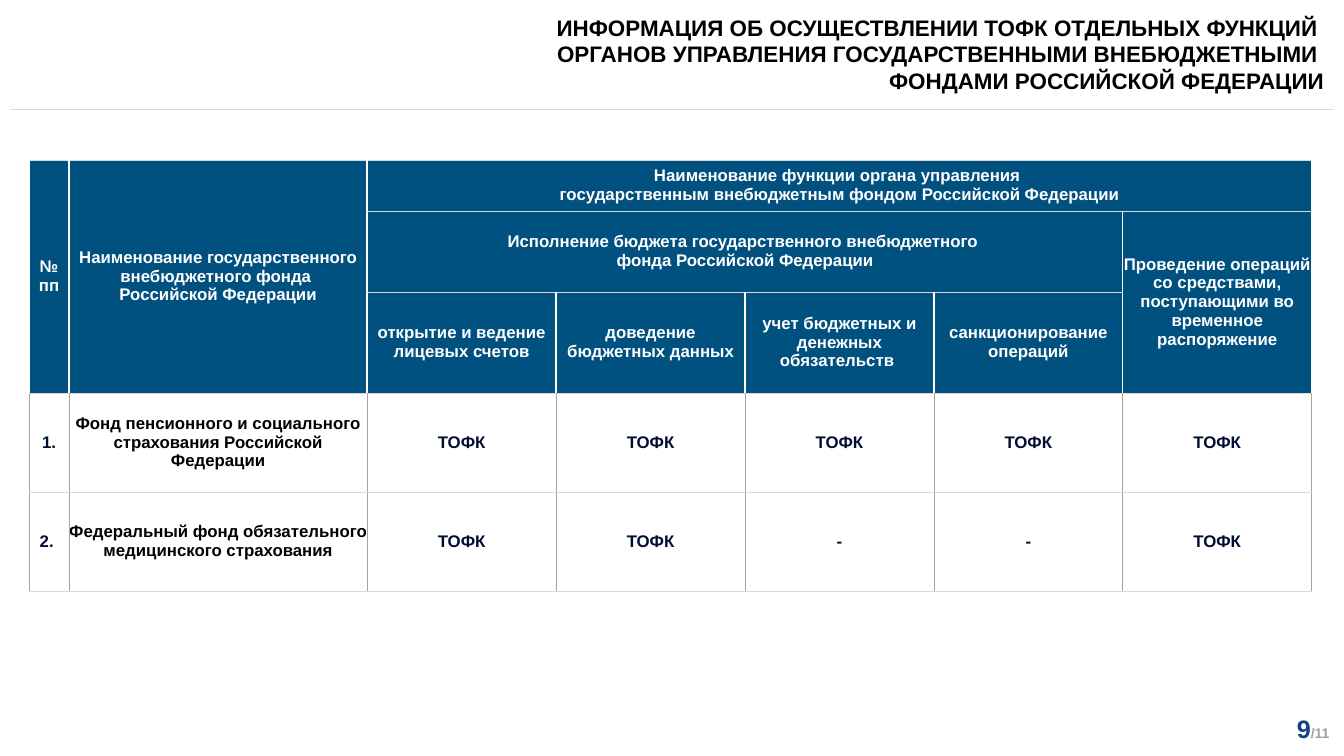
from dataclasses import dataclass

from pptx import Presentation, util as u
from pptx.dml.color import RGBColor
from pptx.enum import shapes, text
from pptx.oxml import parse_xml
from pptx.oxml.ns import nsdecls


@dataclass(frozen=True)
class Theme:
    font: str = "Arial"
    header: str = "005180"
    white: str = "FFFFFF"
    black: str = "000000"
    navy: str = "000D33"
    rule: str = "D9D9D9"
    grid: str = "A7A69B"
    page: str = "11437F"
    total: str = "A0A0A0"
    title_size: int = 32
    table_size: int = 24
    page_size: int = 36
    total_size: int = 20


THEME = Theme()
SLIDE_WIDTH, SLIDE_HEIGHT = u.Inches(26.67), u.Inches(15)

# Table grid: relative column widths and row heights
COLUMNS = [79, 592] + [375] * 5
ROWS = [102, 160, 200, 197, 197]

# Header cells: row, column, rows spanned, columns spanned, wording
HEADERS = [
    (0, 0, 3, 1, "№ пп"),
    (0, 1, 3, 1, "Наименование государственного внебюджетного фонда \n"
                 "Российской Федерации"),
    (0, 2, 1, 5, "Наименование функции органа управления \n"
                 "государственным внебюджетным фондом Российской Федерации"),
    (1, 2, 1, 4, "Исполнение бюджета государственного внебюджетного \n"
                 "фонда Российской Федерации"),
    (1, 6, 2, 1, "Проведение операций со средствами, поступающими во "
                 "временное распоряжение"),
    (2, 2, 1, 1, "открытие и ведение лицевых счетов"),
    (2, 3, 1, 1, "доведение бюджетных данных"),
    (2, 4, 1, 1, "учет бюджетных и денежных обязательств "),
    (2, 5, 1, 1, "санкционирование операций"),
]
HEADER_ROWS = 3
FUNDS = [
    ["1.", "Фонд пенсионного и социального страхования Российской Федерации",
     "ТОФК", "ТОФК", "ТОФК", "ТОФК", "ТОФК"],
    ["2. ", "Федеральный фонд обязательного медицинского страхования",
     "ТОФК", "ТОФК", "-", "-", "ТОФК"],
]


def box(left, top, width, height):
    """Turn percentages of the slide into lengths."""
    return (int(SLIDE_WIDTH * left / 100), int(SLIDE_HEIGHT * top / 100),
            int(SLIDE_WIDTH * width / 100), int(SLIDE_HEIGHT * height / 100))


def set_font(font, size, color, bold=True):
    font.name, font.size, font.bold = THEME.font, u.Pt(size), bold
    font.color.rgb = RGBColor.from_string(color)


def style_paragraphs(frame, align, size, color):
    for paragraph in frame.paragraphs:
        paragraph.alignment = align
        set_font(paragraph.font, size, color)


def set_borders(cell, side_color, side_width):
    sides, levels = (side_color, side_width), (THEME.rule, 0.25)
    edges = {"lnL": sides, "lnR": sides, "lnT": levels, "lnB": levels}
    properties = cell._tc.get_or_add_tcPr()
    for index, (tag, (color, width)) in enumerate(edges.items()):
        properties.insert(index, parse_xml(
            f'<a:{tag} {nsdecls("a")} w="{u.Pt(width)}"><a:solidFill>'
            f'<a:srgbClr val="{color}"/></a:solidFill></a:{tag}>'))


def style_cell(cell, fill, side_color, side_width, inset):
    cell.fill.solid()
    cell.fill.fore_color.rgb = RGBColor.from_string(fill)
    cell.vertical_anchor = text.MSO_ANCHOR.MIDDLE
    cell.margin_left = cell.margin_right = u.Inches(inset)
    cell.margin_top = cell.margin_bottom = 0
    set_borders(cell, side_color, side_width)


def write_cell(cell, wording, color):
    cell.text_frame.text = wording
    style_paragraphs(cell.text_frame, text.PP_ALIGN.CENTER,
                     THEME.table_size, color)


def add_title(slide, area):
    frame = slide.shapes.add_textbox(*area).text_frame
    frame.word_wrap = True
    frame.vertical_anchor = text.MSO_ANCHOR.MIDDLE
    frame.margin_left = frame.margin_top = frame.margin_bottom = 0
    frame.margin_right = u.Inches(0.39)
    frame.text = ("ИНФОРМАЦИЯ ОБ ОСУЩЕСТВЛЕНИИ ТОФК ОТДЕЛЬНЫХ ФУНКЦИЙ \v"
                  "ОРГАНОВ УПРАВЛЕНИЯ ГОСУДАРСТВЕННЫМИ ВНЕБЮДЖЕТНЫМИ \n"
                  "ФОНДАМИ РОССИЙСКОЙ ФЕДЕРАЦИИ")
    style_paragraphs(frame, text.PP_ALIGN.RIGHT, THEME.title_size, THEME.black)


def add_rule(slide, area):
    left, top, width, height = area
    rule = slide.shapes.add_connector(shapes.MSO_CONNECTOR.STRAIGHT,
                                      left, top, left + width, top + height)
    rule.line.color.rgb = RGBColor.from_string(THEME.rule)
    rule.line.width = u.Pt(1)
    rule._element.spPr.append(parse_xml(f'<a:effectLst {nsdecls("a")}/>'))


def add_functions_table(slide, area):
    table = slide.shapes.add_table(len(ROWS), len(COLUMNS), *area).table
    table.first_row = table.horz_banding = False
    for column, share in zip(table.columns, COLUMNS):
        column.width = int(area[2] * share / sum(COLUMNS))
    for row, share in zip(table.rows, ROWS):
        row.height = int(area[3] * share / sum(ROWS))

    # Fills and borders, also under the merged cells
    for row in range(len(ROWS)):
        for column in range(len(COLUMNS)):
            cell = table.cell(row, column)
            if row < HEADER_ROWS:
                style_cell(cell, THEME.header, THEME.white, 2.25, 0.01)
            else:
                style_cell(cell, THEME.white, THEME.grid, 1, 0)

    # Header
    for row, column, height, width, wording in HEADERS:
        cell = table.cell(row, column)
        if height * width > 1:
            cell.merge(table.cell(row + height - 1, column + width - 1))
        write_cell(cell, wording, THEME.white)

    # Funds
    for row, fund in enumerate(FUNDS, HEADER_ROWS):
        for column, wording in enumerate(fund):
            color = THEME.black if column == 1 else THEME.navy
            write_cell(table.cell(row, column), wording, color)


def add_page_number(slide, area):
    frame = slide.shapes.add_textbox(*area).text_frame
    frame.word_wrap = True
    paragraph = frame.paragraphs[0]
    paragraph.alignment = text.PP_ALIGN.RIGHT
    for wording, size, color in (("9", THEME.page_size, THEME.page),
                                 ("/11", THEME.total_size, THEME.total)):
        run = paragraph.add_run()
        run.text = wording
        set_font(run.font, size, color)


def main():
    deck = Presentation()
    deck.slide_width, deck.slide_height = SLIDE_WIDTH, SLIDE_HEIGHT
    slide = deck.slides.add_slide(deck.slide_layouts[6])
    add_rule(slide, box(0.75, 14.47, 98.5, 0))
    add_page_number(slide, box(92.2, 94, 7.09, 4.73))
    add_functions_table(slide, box(2.17, 21.13, 95.43, 57.07))
    add_title(slide, box(0, 0, 100, 14.27))
    deck.save("out.pptx")


if __name__ == "__main__":
    main()
